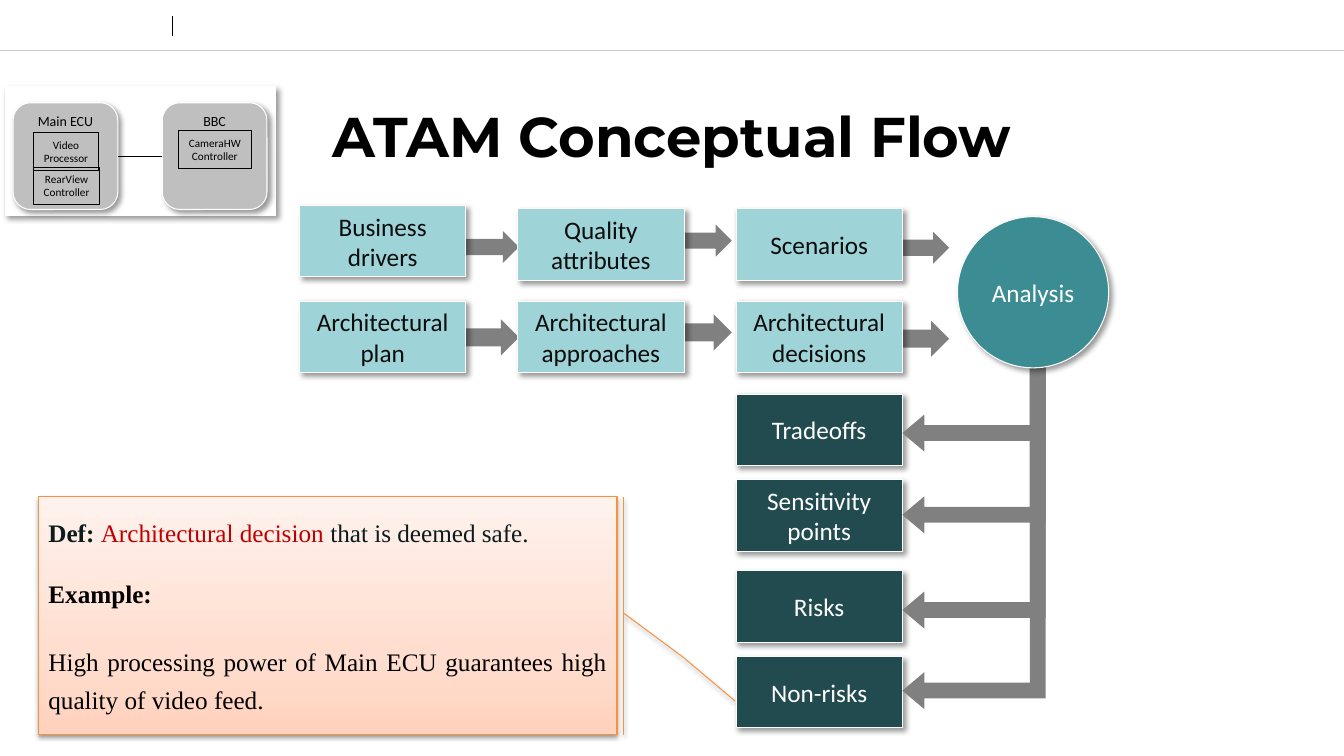
from collections import namedtuple

from lxml import etree
from copy import deepcopy
from pptx import Presentation
from pptx.dml.color import RGBColor
from pptx.enum.shapes import MSO_CONNECTOR, MSO_SHAPE
from pptx.enum.text import MSO_ANCHOR, MSO_AUTO_SIZE, PP_ALIGN
from pptx.oxml.ns import qn
from pptx.util import Cm, Pt

RECTANGLE, ROUNDED, OVAL = MSO_SHAPE.RECTANGLE, MSO_SHAPE.ROUNDED_RECTANGLE, MSO_SHAPE.OVAL
RIGHT_ARROW, BENT_ARROW = MSO_SHAPE.RIGHT_ARROW, MSO_SHAPE.BENT_UP_ARROW
CALLOUT = MSO_SHAPE.LINE_CALLOUT_2_BORDER_AND_ACCENT_BAR
STRAIGHT = MSO_CONNECTOR.STRAIGHT
TOP, MIDDLE = MSO_ANCHOR.TOP, MSO_ANCHOR.MIDDLE
CENTER, LEFT, JUSTIFY = PP_ALIGN.CENTER, PP_ALIGN.LEFT, PP_ALIGN.JUSTIFY
FIT_SHAPE = MSO_AUTO_SIZE.SHAPE_TO_FIT_TEXT

Box = namedtuple("Box", "left top width height")
Shadow = namedtuple("Shadow", "alpha blur distance angle")
SOFT = Shadow(40, 4, 3, 45)
BELOW = Shadow(38, 3.1, 1.6, 90)
WHITE, BLACK, GREY = "FFFFFF", "000000", "808080"


def rgb(value):
    """Turn a hex string into a colour."""
    return RGBColor.from_string(value)


def within(box, left, top, width, height):
    """Return a box given relative to the corner of another."""
    return Box(box.left + left, box.top + top, width, height)


def set_format(target, values):
    """Set each attribute in a dict of format values."""
    for name, value in values.items():
        setattr(target, name, value)


def add_span(para, text, size, color, font="Calibri", bold=False):
    """Add one formatted run to a paragraph."""
    span = para.add_run()
    span.text = text
    set_format(span.font, {"name": font, "size": Pt(size), "bold": bold})
    span.font.color.rgb = rgb(color)


def add_shadow(shape, shadow):
    """Give a shape an outer shadow."""
    shape.shadow.inherit = False
    effects = shape.element.spPr.find(qn("a:effectLst"))
    outer = etree.SubElement(effects, qn("a:outerShdw"), {
        "blurRad": str(Pt(shadow.blur)), "dist": str(Pt(shadow.distance)),
        "dir": str(shadow.angle * 60000), "algn": "tl", "rotWithShape": "0"})
    color = etree.SubElement(outer, qn("a:srgbClr"), val=BLACK)
    etree.SubElement(color, qn("a:alpha"), val=str(shadow.alpha * 1000))


def add_shape(page, kind, box, fill, line=None, shadow=None):
    """Add a preset shape with a plain fill."""
    shape = page.shapes.add_shape(kind, *map(Cm, box))
    shape.shadow.inherit = False
    shape.fill.solid()
    shape.fill.fore_color.rgb = rgb(fill)
    if line:
        shape.line.color.rgb = rgb(line)
        shape.line.width = Pt(0.75)
    else:
        shape.line.fill.background()
    if shadow:
        add_shadow(shape, shadow)
    return shape


def add_node(page, kind, box, fill, text, color, size=18, anchor=MIDDLE):
    """Add a labelled shape with a white edge and a shadow."""
    node = add_shape(page, kind, box, fill, WHITE, SOFT)
    set_format(node.text_frame, {"word_wrap": True, "vertical_anchor": anchor})
    para = node.text_frame.paragraphs[0]
    para.alignment = CENTER
    add_span(para, text, size, color)
    return node


def add_line(page, start, end, color, width):
    """Add a straight line without a shadow."""
    line = page.shapes.add_connector(STRAIGHT, *map(Cm, start + end))
    line.line.color.rgb = rgb(color)
    line.line.width = Pt(width)
    etree.SubElement(line.element.spPr, qn("a:effectLst"))
    return line


def add_header(page, box):
    """Draw the header rules and fill in the title."""
    add_line(page, (box.left, 1.27), (box.left + box.width, 1.27), "CCCCCC", 0.25)
    add_line(page, (4.34, 0.41), (4.34, 0.91), BLACK, 0.5)
    title = page.shapes.title
    title_box = within(box, 0, 2.34, box.width, 2.11)
    set_format(title, dict(zip(box._fields, map(Cm, title_box))))
    title.text_frame.vertical_anchor = MIDDLE
    para = title.text_frame.paragraphs[0]
    para.alignment = CENTER
    add_span(para, "ATAM Conceptual Flow", 40, BLACK, "Montserrat", True)


def add_flow(page, box):
    """Place the two rows of inputs with arrows between them."""
    rows = [
        (0.08, 0.81, [("Business drivers", 0, 3.78, 0.64),
                      ("Quality attributes", 0.08, 9.14, 0.48),
                      ("Scenarios", 0.08, 14.62, 0.66)]),
        (2.41, 0.91, [("Architectural plan", 2.41, 3.78, 2.87),
                      ("Architectural approaches", 2.41, 9.14, 2.74),
                      ("Architectural decisions", 2.41, 14.62, 2.9)]),
    ]
    for _, height, steps in rows:
        for _, _, left, top in steps:
            add_shape(page, RIGHT_ARROW, within(box, left, top, 1.75, height), GREY)
    for _, _, steps in rows:
        for column, (text, top, _, _) in enumerate(steps):
            place = within(box, column * 5.5, top, 4.19, 1.8)
            add_node(page, RECTANGLE, place, "9ED3D7", text, "0D0D0D")


def add_results(page, box):
    """Place the analysis circle, its outputs and the arrows to them."""
    outputs = [("Tradeoffs", 4.47, 0.53, 5.39), ("Sensitivity points", 6.63, 2.13, 5.85),
               ("Risks", 8.92, 2.12, 8.26), ("Non-risks", 11.08, 0.6, 11.81)]
    for text, top, _, _ in outputs:
        add_node(page, RECTANGLE, within(box, 0, top, 4.19, 1.8), "224B50", text, WHITE)
    for _, _, top, length in outputs:
        breadth = 3.61
        shift = (length - breadth) / 2
        place = within(box, 4.19 - shift, top + shift, length, breadth)
        arrow = add_shape(page, BENT_ARROW, place, GREY)
        for index, value in enumerate((0.11, 0.129, 0.154)):
            arrow.adjustments[index] = value
        arrow.rotation = 270
        arrow.element.spPr.xfrm.set("flipH", "1")
    add_node(page, OVAL, within(box, 5.58, 0, 3.81, 3.81), "3C8C93", "Analysis", WHITE)


def add_module(page, box, words):
    """Add an outlined software module, one word a line."""
    module = page.shapes.add_textbox(*map(Cm, box))
    module.line.color.rgb = rgb(BLACK)
    module.line.width = Pt(0.75)
    frame = module.text_frame
    set_format(frame, {"word_wrap": False, "auto_size": FIT_SHAPE})
    for index, word in enumerate(words):
        para = frame.add_paragraph() if index else frame.paragraphs[0]
        para.alignment = CENTER
        add_span(para, word, 8, BLACK)


def add_system(page, box):
    """Draw the two connected control units in their panel."""
    add_shape(page, RECTANGLE, box, WHITE, WHITE, SOFT)
    units = [
        ("BBC", 3.96, [(("CameraHW", "Controller"), 0.41, 0.71, 1.83)]),
        ("Main ECU", 0.2, [(("Video", "Processor"), 0.51, 0.76, 1.65),
                           (("RearView", "Controller"), 0.51, 1.63, 1.68)]),
    ]
    nodes = []
    for name, left, modules in units:
        unit = within(box, left, 0.41, 2.64, 2.69)
        nodes.append(add_node(page, ROUNDED, unit, "BFBFBF", name, BLACK, 10, TOP))
        for words, inner_left, inner_top, width in modules:
            add_module(page, within(unit, inner_left, inner_top, width, 0.94), words)
    link = add_line(page, (4.09, 3.91), (2.97, 3.91), BLACK, 0.75)
    link.begin_connect(nodes[0], 1)
    link.end_connect(nodes[1], 3)


def add_definition(page, box):
    """Add the callout that defines and illustrates non-risks."""
    note = add_shape(page, CALLOUT, box, WHITE, "F69240", BELOW)
    for index, value in enumerate((0.49, 1.012, 0.676, 1.115, 0.859, 1.204)):
        note.adjustments[index] = value
    note.fill.gradient()
    note.fill.gradient_angle = 90
    stops = note.element.spPr.find(qn("a:gradFill")).find(qn("a:gsLst"))
    stops.append(deepcopy(stops[0]))
    shades = [(0, "FFD2BD"), (0.35, "FFDED0"), (1, "FFF2ED")]
    for stop, (position, color) in zip(note.fill.gradient_stops, shades):
        stop.position = position
        stop.color.rgb = rgb(color)
    frame = note.text_frame
    set_format(frame, {"word_wrap": True, "vertical_anchor": MIDDLE})
    paragraphs = [
        ({"alignment": LEFT},
         [("Def: ", "0C1C1D", True), ("Architectural decision ", "C00000", False),
          ("that is deemed safe.", "0C1C1D", False)]),
        ({"alignment": LEFT, "space_before": Pt(22)}, [("Example:", BLACK, True)]),
        ({"alignment": JUSTIFY, "space_before": Pt(22), "space_after": Pt(12),
          "line_spacing": 1.25},
         [("High processing power of Main ECU guarantees high quality of video feed.",
           BLACK, False)]),
    ]
    for index, (values, spans) in enumerate(paragraphs):
        para = frame.add_paragraph() if index else frame.paragraphs[0]
        set_format(para, values)
        for text, color, bold in spans:
            add_span(para, text, 18, color, "Times New Roman", bold)


def main():
    """Build the slide and save the deck."""
    deck = Presentation()
    set_format(deck, {"slide_width": Cm(33.87), "slide_height": Cm(19.05)})
    page = deck.slides.add_slide(deck.slide_layouts[5])
    add_header(page, Box(0, 0, 33.87, 4.45))
    add_flow(page, Box(7.55, 5.18, 16.37, 4.21))
    add_results(page, Box(18.55, 5.46, 9.39, 12.88))
    add_system(page, Box(0.13, 2.18, 6.81, 3.25))
    add_definition(page, Box(0.97, 12.52, 14.58, 5.99))
    deck.save("out.pptx")


if __name__ == "__main__":
    main()
